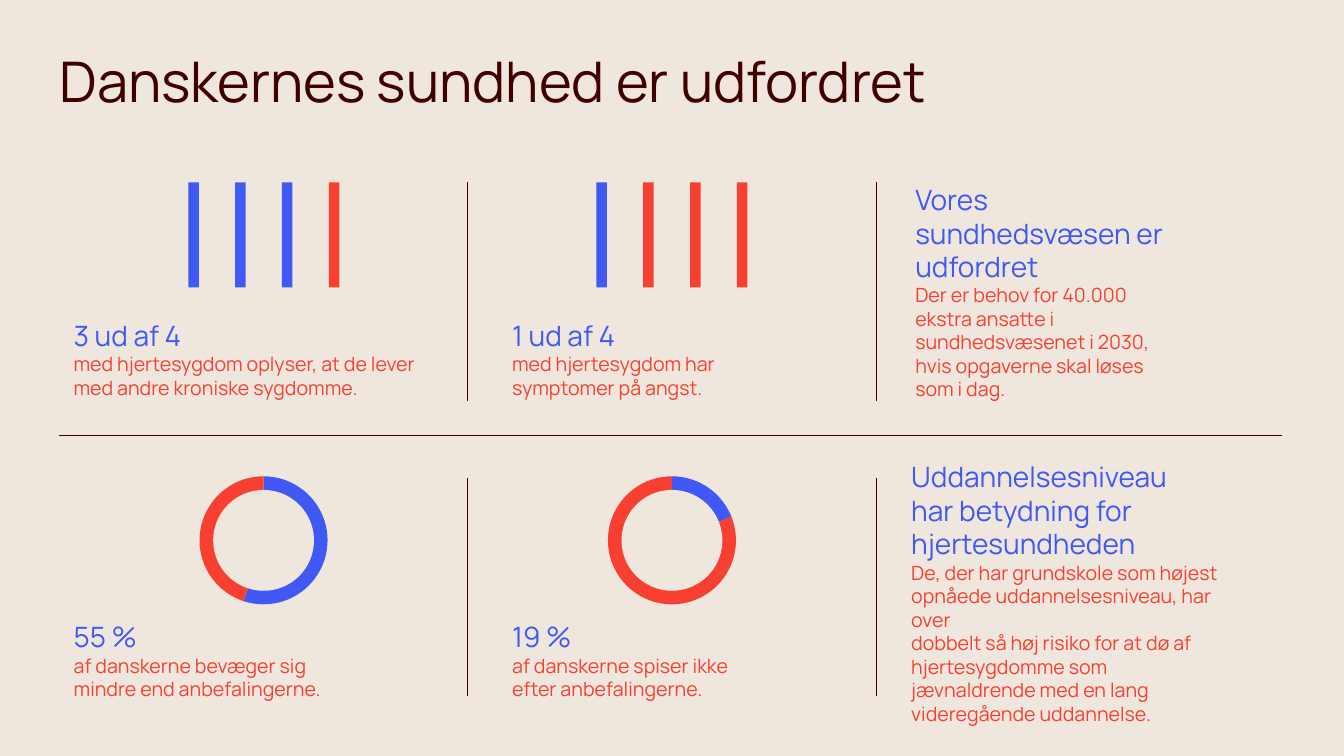
from lxml import etree
from pptx import Presentation
from pptx.chart.data import CategoryChartData
from pptx.dml.color import RGBColor
from pptx.enum import chart as charts, shapes, text
from pptx.oxml import parse_xml
from pptx.oxml.ns import nsdecls, qn
from pptx.util import Pt

SAND = RGBColor(0xEF, 0xE6, 0xDD)
MAROON = RGBColor(0x40, 0x00, 0x00)
BLUE = RGBColor(0x40, 0x58, 0xF4)
RED = RGBColor(0xF7, 0x40, 0x30)
FONT = "Manrope"

LEFT, RIGHT = 42.5, 916
DIVIDERS_X = (334, 625.7)
ROWS_Y = (130.3, 341.3)
DIVIDER_HEIGHT = 156
MIDDLE_Y = 311

BAR_WIDTH, BAR_HEIGHT, BAR_STEP = 7.5, 75, 33.45
PIE_WIDTH, PIE_HEIGHT, PIE_DIAMETER, HOLE_DIAMETER = 167, 111, 91.5, 72

# left, top, width, heading, body
FACTS = [
    (52.6, 227.5, 271.4, "3 ud af 4",
     "med hjertesygdom oplyser, at de lever med andre kroniske sygdomme."),
    (365.8, 227.5, 196.6, "1 ud af 4",
     "med hjertesygdom har symptomer på angst."),
    (653.8, 130.3, 189.4, "Vores sundhedsvæsen er udfordret",
     "Der er behov for 40.000 ekstra ansatte i sundhedsvæsenet i 2030, "
     "hvis opgaverne skal løses som i dag."),
    (52.6, 442.8, 207.4, "55 %",
     "af danskerne bevæger sig mindre end anbefalingerne."),
    (365.8, 442.8, 179.3, "19 %",
     "af danskerne spiser ikke efter anbefalingerne."),
    (650.9, 328.3, 219.6, "Uddannelsesniveau\nhar betydning for hjertesundheden",
     "De, der har grundskole som højest opnåede uddannelsesniveau, har over\n"
     "dobbelt så høj risiko for at dø af hjertesygdomme som jævnaldrende "
     "med en lang videregående uddannelse."),
]


def style_paragraph(paragraph, size, color):
    paragraph.alignment = text.PP_ALIGN.LEFT
    paragraph.font.name = FONT
    paragraph.font.size = Pt(size)
    paragraph.font.color.rgb = color


def prepare_frame(frame):
    frame.margin_left = frame.margin_right = frame.margin_top = frame.margin_bottom = 0
    frame.word_wrap = True
    frame.vertical_anchor = text.MSO_ANCHOR.TOP


def set_title(slide, title):
    placeholder = slide.shapes.title
    placeholder.left, placeholder.top = Pt(LEFT), Pt(36.7)
    placeholder.width, placeholder.height = Pt(753), Pt(53.3)
    frame = placeholder.text_frame
    prepare_frame(frame)
    frame.auto_size = text.MSO_AUTO_SIZE.NONE
    paragraph = frame.paragraphs[0]
    paragraph.text = title
    paragraph.line_spacing = 0.95
    style_paragraph(paragraph, 40, MAROON)


def add_fact(slide, left, top, width, heading, body):
    box = slide.shapes.add_textbox(Pt(left), Pt(top), Pt(width), Pt(58))
    frame = box.text_frame
    prepare_frame(frame)
    frame.auto_size = text.MSO_AUTO_SIZE.SHAPE_TO_FIT_TEXT
    frame.paragraphs[0].text = heading
    style_paragraph(frame.paragraphs[0], 20, BLUE)
    paragraph = frame.add_paragraph()
    paragraph.text = body
    style_paragraph(paragraph, 14, RED)


def add_line(slide, x1, y1, x2, y2):
    line = slide.shapes.add_connector(
        shapes.MSO_CONNECTOR.STRAIGHT, Pt(x1), Pt(y1), Pt(x2), Pt(y2))
    line.line.color.rgb = MAROON
    line.line.width = Pt(0.5)
    etree.SubElement(line._element.spPr, qn("a:effectLst"))


def add_filled_shape(slide, kind, left, top, width, height, color):
    shape = slide.shapes.add_shape(kind, Pt(left), Pt(top), Pt(width), Pt(height))
    shape.shadow.inherit = False
    shape.fill.solid()
    shape.fill.fore_color.rgb = color
    shape.line.fill.background()


def add_bars(slide, left, blue_count):
    """Draw four upright bars, the first blue_count of them blue."""
    for index in range(4):
        add_filled_shape(slide, shapes.MSO_SHAPE.RECTANGLE, left + index * BAR_STEP,
                         ROWS_Y[0], BAR_WIDTH, BAR_HEIGHT,
                         BLUE if index < blue_count else RED)


def add_ring(slide, center_x, center_y, percent):
    """Draw a pie chart with a round hole in the background colour."""
    data = CategoryChartData()
    data.categories = ["1", "2"]
    data.add_series("Series 1", (percent, 100 - percent))
    chart = slide.shapes.add_chart(
        charts.XL_CHART_TYPE.PIE, Pt(center_x - PIE_WIDTH / 2),
        Pt(center_y - PIE_HEIGHT / 2), Pt(PIE_WIDTH), Pt(PIE_HEIGHT), data).chart
    chart.has_legend = False
    chart.has_title = False
    chart.font.name = FONT
    chart.font.size = Pt(10)
    chart.font.color.rgb = RGBColor(0, 0, 0)
    plot = chart.plots[0]
    plot.vary_by_categories = False
    for index, color in enumerate((BLUE, RED)):
        slice_format = plot.series[0].points[index].format
        slice_format.fill.solid()
        slice_format.fill.fore_color.rgb = color
        slice_format.line.fill.background()
    set_plot_size(chart, PIE_DIAMETER / PIE_WIDTH, PIE_DIAMETER / PIE_HEIGHT)
    add_filled_shape(slide, shapes.MSO_SHAPE.OVAL, center_x - HOLE_DIAMETER / 2,
                     center_y - HOLE_DIAMETER / 2, HOLE_DIAMETER, HOLE_DIAMETER, SAND)


def set_plot_size(chart, width, height):
    """Centre the plot area at the given shares of the chart's size."""
    area = chart._chartSpace.chart.plotArea
    for layout in area.findall(qn("c:layout")):
        area.remove(layout)
    area.insert(0, parse_xml(
        f'<c:layout {nsdecls("c")}><c:manualLayout><c:layoutTarget val="inner"/>'
        '<c:xMode val="edge"/><c:yMode val="edge"/>'
        f'<c:x val="{(1 - width) / 2:.4f}"/><c:y val="{(1 - height) / 2:.4f}"/>'
        f'<c:w val="{width:.4f}"/><c:h val="{height:.4f}"/>'
        '</c:manualLayout></c:layout>'))


def main():
    presentation = Presentation()
    presentation.slide_width, presentation.slide_height = Pt(960), Pt(540)
    slide = presentation.slides.add_slide(presentation.slide_layouts[5])
    slide.background.fill.solid()
    slide.background.fill.fore_color.rgb = SAND

    set_title(slide, "Danskernes sundhed er udfordret")
    add_line(slide, LEFT, MIDDLE_Y, RIGHT, MIDDLE_Y)
    for top in ROWS_Y:
        for x in DIVIDERS_X:
            add_line(slide, x, top, x, top + DIVIDER_HEIGHT)
    for left, blue_count in ((134.5, 3), (426, 1)):
        add_bars(slide, left, blue_count)
    for center_x, percent in ((188.3, 55), (480, 19)):
        add_ring(slide, center_x, 386, percent)
    for fact in FACTS:
        add_fact(slide, *fact)

    presentation.save("out.pptx")


if __name__ == "__main__":
    main()
